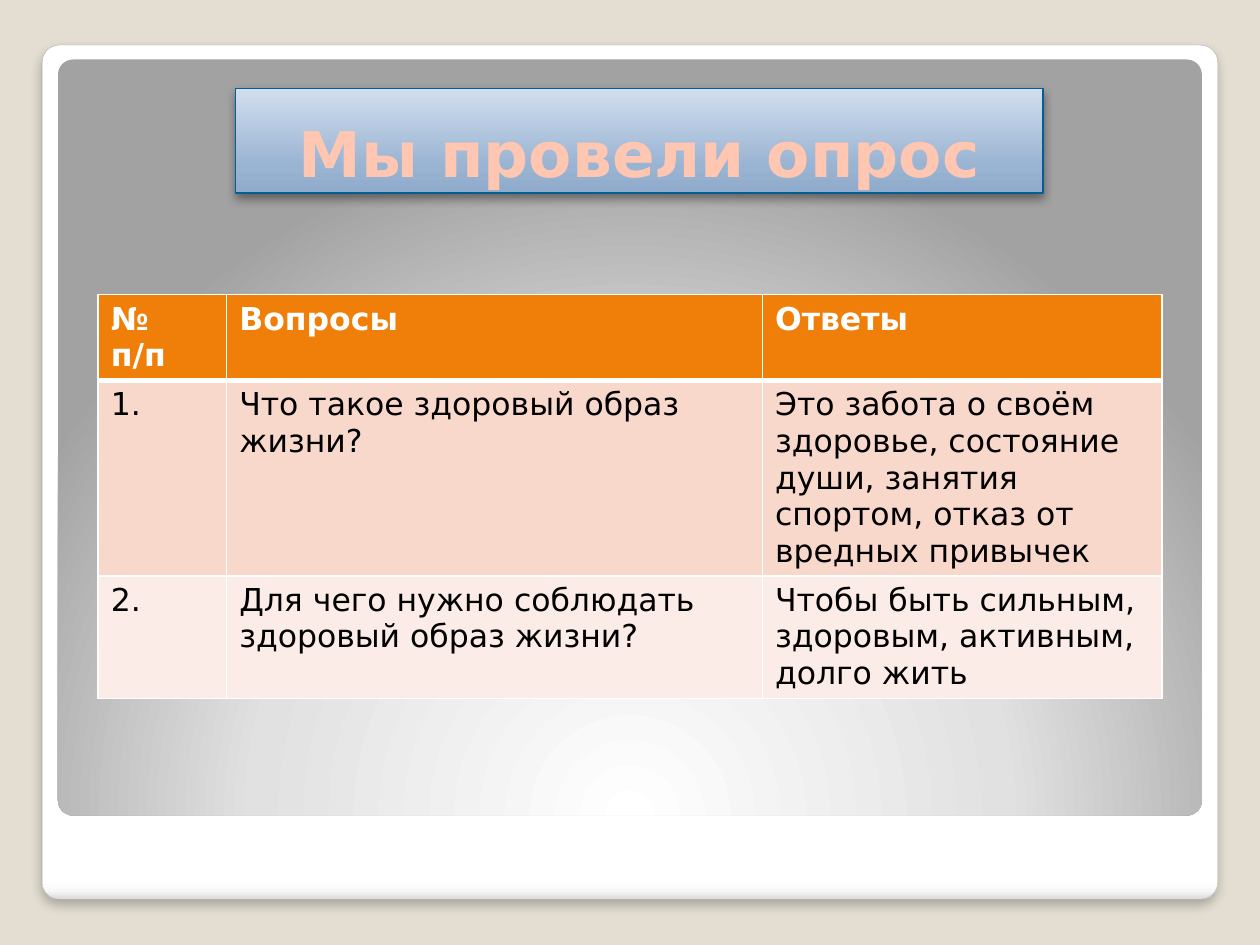
from lxml.etree import SubElement
from pptx import Presentation
from pptx.dml.color import RGBColor
from pptx.enum.shapes import MSO_SHAPE
from pptx.enum.text import MSO_ANCHOR, PP_ALIGN
from pptx.oxml.ns import qn
from pptx.util import Cm, Pt

FONT = "DejaVu Sans"
ROWS = [
    ["№ п/п", "Вопросы", "Ответы"],
    ["1.", "Что такое здоровый образ жизни?",
     "Это забота о своём здоровье, состояние души, занятия спортом, "
     "отказ от вредных привычек"],
    ["2.", "Для чего нужно соблюдать здоровый образ жизни?",
     "Чтобы быть сильным, здоровым, активным, долго жить"],
]
COLUMN_WIDTHS = [2.59, 10.8, 8.05]
ROW_HEIGHTS = [1.7, 3.94, 2.47]
ROW_FILLS = ["F07F09", "F9D8CC", "FCECE7"]


def color(value):
    return RGBColor.from_string(value)


def add_node(parent, tag, **attributes):
    texts = {name: str(value) for name, value in attributes.items()}
    return SubElement(parent, qn(tag), texts)


def set_gradient(shape, stops, angle=None):
    shape.fill.gradient()
    gradient = shape.element.spPr.find(qn("a:gradFill"))
    for child in list(gradient):
        gradient.remove(child)
    stop_list = add_node(gradient, "a:gsLst")
    for position, value in stops:
        stop = add_node(stop_list, "a:gs", pos=position * 1000)
        add_node(stop, "a:srgbClr", val=value)
    if angle is None:
        circle = add_node(gradient, "a:path", path="circle")
        add_node(circle, "a:fillToRect", l=50000, t=175000, r=50000, b=-75000)
    else:
        add_node(gradient, "a:lin", ang=angle * 60000, scaled=0)


def set_shadow(shape, alpha, blur, distance):
    effects = shape.element.spPr.find(qn("a:effectLst"))
    shadow = add_node(effects, "a:outerShdw", blurRad=Pt(blur), dist=Pt(distance),
                      dir=90 * 60000, algn="tl", rotWithShape=0)
    black = add_node(shadow, "a:srgbClr", val="000000")
    add_node(black, "a:alpha", val=alpha * 1000)


def add_panel(page, kind, place, stops, angle=None, line=None, shadow=None):
    panel = page.shapes.add_shape(kind, *map(Cm, place))
    panel.shadow.inherit = False
    set_gradient(panel, stops, angle)
    if kind == MSO_SHAPE.ROUNDED_RECTANGLE:
        panel.adjustments[0] = 0.02
    if line:
        panel.line.color.rgb = color(line[0])
        panel.line.width = Pt(line[1])
    else:
        panel.line.fill.background()
    if shadow:
        set_shadow(panel, *shadow)
    return panel


def write(frame, text, size, text_color, bold, align=PP_ALIGN.LEFT):
    paragraph = frame.paragraphs[0]
    paragraph.alignment = align
    span = paragraph.add_run()
    span.text = text
    for name, value in {"name": FONT, "size": Pt(size), "bold": bold}.items():
        setattr(span.font, name, value)
    span.font.color.rgb = color(text_color)


def set_borders(cell, widths):
    properties = cell._tc.get_or_add_tcPr()
    for index, (side, width) in enumerate(widths.items()):
        border = add_node(properties, f"a:ln{side}", w=Pt(width))
        fill = add_node(border, "a:solidFill")
        add_node(fill, "a:srgbClr", val="FFFFFF")
        properties.insert(index, border)


def add_title(page):
    box = add_panel(page, MSO_SHAPE.RECTANGLE, (4.75, 1.78, 16.28, 2.11),
                    [(0, "90ABCB"), (25, "99B3D2"), (100, "D1DEEE")], 270,
                    ("035E94", 0.75), (40, 5.2, 3))
    frame = box.text_frame
    settings = {"word_wrap": True, "vertical_anchor": MSO_ANCHOR.BOTTOM,
                "margin_bottom": Cm(0.05)}
    for name, value in settings.items():
        setattr(frame, name, value)
    write(frame, "Мы провели опрос", 36, "FFC6B2", True, PP_ALIGN.CENTER)


def add_survey_table(page):
    table = page.shapes.add_table(
        len(ROWS), len(COLUMN_WIDTHS), Cm(1.98), Cm(5.94),
        Cm(sum(COLUMN_WIDTHS)), Cm(sum(ROW_HEIGHTS))).table
    for column, width in zip(table.columns, COLUMN_WIDTHS):
        column.width = Cm(width)
    for index, (texts, height, fill) in enumerate(zip(ROWS, ROW_HEIGHTS, ROW_FILLS)):
        header = index == 0
        table.rows[index].height = Cm(height)
        for cell, text in zip(table.rows[index].cells, texts):
            cell.fill.solid()
            cell.fill.fore_color.rgb = color(fill)
            top = 3 if index == 1 else 1
            set_borders(cell, {"L": 1, "R": 1, "T": top, "B": 3 if header else 1})
            write(cell.text_frame, text, 18, "FFFFFF" if header else "000000", header)


def main():
    deck = Presentation()
    deck.slide_width, deck.slide_height = Cm(25.4), Cm(19.05)
    page = deck.slides.add_slide(deck.slide_layouts[6])
    page.background.fill.solid()
    page.background.fill.fore_color.rgb = color("E3DED1")
    add_panel(page, MSO_SHAPE.ROUNDED_RECTANGLE, (0.85, 0.91, 23.7, 17.22),
              [(0, "FFFFFF"), (98, "FFFFFF"), (99, "F7F7F7"), (100, "DADADA")], 90,
              ("A4A4A4", 0.16), (25, 6, 4))
    add_panel(page, MSO_SHAPE.ROUNDED_RECTANGLE, (1.17, 1.2, 23.06, 15.24),
              [(0, "FFFFFF"), (55, "E1E1E1"), (100, "A2A2A2")])
    add_title(page)
    add_survey_table(page)
    deck.save("out.pptx")


if __name__ == "__main__":
    main()
